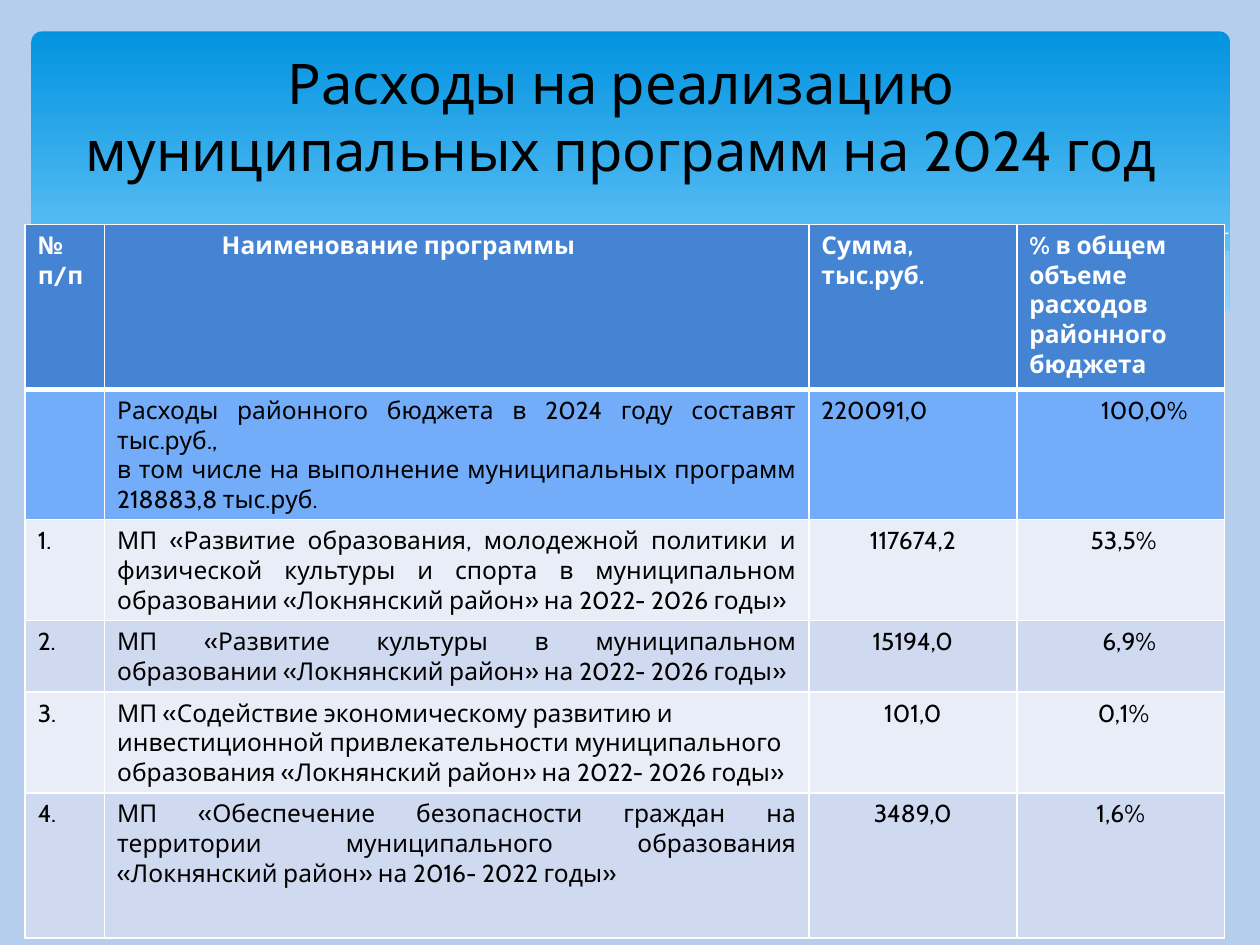
from lxml import etree
from pptx import Presentation, util as u
from pptx.dml.color import RGBColor
from pptx.enum import shapes, text
from pptx.oxml.ns import qn

FONT = "Cabin"
PALE, WHITE, BLACK = "B5CEED", "FFFFFF", "000000"
LEFT, CENTER, JUSTIFY = (text.PP_ALIGN.LEFT, text.PP_ALIGN.CENTER,
                         text.PP_ALIGN.JUSTIFY)
SPACE = 0.045  # indent step that nudges centred percentages

# Decorative waves: outline points in inches and their format
WAVES = [
    ([(9.75, 1.99), (9.35, 2.07), (8.61, 2.23), (7.79, 2.42), (7.06, 2.57),
      (6.61, 2.65), (7.05, 2.71), (7.57, 2.76), (8.03, 2.78), (8.54, 2.76),
      (8.97, 2.7), (9.35, 2.61), (9.76, 2.47), (9.76, 1.99)],
     {"fill": "C6E7FC", "alpha": 29}),
    ([(8.93, 2.73), (8.37, 2.65), (7.75, 2.54), (7.06, 2.4), (6.29, 2.22),
      (5.69, 2.08), (5.14, 1.98), (4.65, 1.91), (4.2, 1.87), (3.8, 1.86),
      (3.28, 1.87), (2.86, 1.91), (3.42, 1.99), (4.04, 2.11), (4.91, 2.32),
      (5.66, 2.48), (6.34, 2.61), (6.95, 2.7), (7.48, 2.76), (8.07, 2.78),
      (8.57, 2.77)],
     {"fill": "C6E7FC", "alpha": 40}),
    ([(3.09, 1.95), (3.44, 1.9), (4.01, 1.87), (4.5, 1.88), (5.1, 1.92),
      (5.82, 2), (6.36, 2.08), (6.95, 2.19), (7.6, 2.33), (8.31, 2.51),
      (9.07, 2.72)],
     {"line": WHITE}),
    ([(6.13, 2.57), (6.72, 2.41), (7.48, 2.23), (8.36, 2.04), (8.95, 1.94),
      (9.38, 1.88), (9.75, 1.85)],
     {"line": WHITE}),
    ([(9.77, 2.46), (9.4, 2.59), (8.99, 2.69), (8.5, 2.75), (8.09, 2.77),
      (7.44, 2.74), (6.68, 2.65), (5.79, 2.5), (5.03, 2.33), (4.18, 2.13),
      (3.39, 1.97), (2.71, 1.88), (1.93, 1.84), (1.32, 1.86), (0.85, 1.93),
      (0.46, 2.03), (0.23, 2.13), (0.23, 3.29), (9.77, 3.29)],
     {"fill": PALE}),
]

# Table content: each cell is (paragraphs, alignment, left indent in inches)
COLUMN_WIDTHS = [0.63, 5.59, 1.65, 1.65]
ROW_HEIGHTS = [1.31, 0.8, 0.8, 0.56, 0.8, 1.15]
ROW_FILLS = ["4584D3", "73ACF8", "E9EDF7", "CFD9EF", "E9EDF7", "CFD9EF"]
HEADER = [
    (["№ п/п"], LEFT, 0),
    (["Наименование программы"], LEFT, 0.83),
    (["Сумма, тыс.руб."], LEFT, 0),
    (["% в общем объеме расходов районного бюджета"], LEFT, 0),
]
TOTAL = [
    ([""], LEFT, 0),
    (["Расходы районного бюджета в 2024 году составят тыс.руб.,",
      "в том числе на выполнение муниципальных программ 218883,8 тыс.руб."],
     JUSTIFY, 0),
    (["220091,0"], LEFT, 0),
    (["100,0%"], LEFT, 0.57),
]
PROGRAMS = [
    ("МП «Развитие образования, молодежной политики и физической культуры "
     "и спорта в муниципальном образовании «Локнянский район» "
     "на 2022- 2026 годы»", JUSTIFY, "117674,2", "53,5%", SPACE),
    ("МП «Развитие культуры в муниципальном образовании «Локнянский район» "
     "на 2022- 2026 годы»", JUSTIFY, "15194,0", "6,9%", 3 * SPACE),
    ("МП «Содействие экономическому развитию и инвестиционной "
     "привлекательности муниципального образования «Локнянский район» "
     "на 2022- 2026 годы»", LEFT, "101,0", "0,1%", SPACE),
    ("МП «Обеспечение безопасности граждан на территории муниципального "
     "образования «Локнянский район» на 2016- 2022 годы»",
     JUSTIFY, "3489,0", "1,6%", 0),
]


def color(hex_value):
    return RGBColor.from_string(hex_value)


def paint(fill, hex_value):
    fill.solid()
    fill.fore_color.rgb = color(hex_value)


def style_run(run, hex_value, **formats):
    for name, value in {"name": FONT, **formats}.items():
        setattr(run.font, name, value)
    run.font.color.rgb = color(hex_value)


def add_banner(slide):
    banner = slide.shapes.add_shape(
        shapes.MSO_SHAPE.ROUNDED_RECTANGLE,
        u.Inches(0.25), u.Inches(0.25), u.Inches(9.51), u.Inches(2.7))
    banner.adjustments[0] = 0.03
    banner.shadow.inherit = False
    banner.line.fill.background()
    banner.fill.gradient()
    banner.fill.gradient_angle = 270
    stops = [(0, "0293E0"), (0.9, "83D3FE")]
    for stop, (position, hex_value) in zip(banner.fill.gradient_stops, stops):
        stop.position = position
        stop.color.rgb = color(hex_value)


def add_wave(slide, points, fill=None, alpha=None, line=None):
    start, *rest = [(u.Inches(x), u.Inches(y)) for x, y in points]
    builder = slide.shapes.build_freeform(*start)
    builder.add_line_segments(rest, close=fill is not None)
    wave = builder.convert_to_shape()
    wave.shadow.inherit = False
    if fill:
        paint(wave.fill, fill)
        wave.line.fill.background()
    else:
        wave.fill.background()
        wave.line.color.rgb = color(line)
        wave.line.width = u.Pt(0)
    if alpha:
        tint = wave.fill._xPr.find(qn("a:solidFill"))[0]
        etree.SubElement(tint, qn("a:alpha"), val=str(alpha * 1000))


def add_title(slide, wording):
    title = slide.shapes.add_textbox(
        u.Inches(0.43), u.Inches(0.36), u.Inches(9), u.Inches(1.12))
    frame = title.text_frame
    frame.word_wrap = True
    frame.vertical_anchor = text.MSO_ANCHOR.MIDDLE
    paragraph = frame.paragraphs[0]
    paragraph.alignment = CENTER
    run = paragraph.add_run()
    run.text = wording
    style_run(run, BLACK, size=u.Pt(32))


def set_borders(cell, widths):
    properties = cell._tc.get_or_add_tcPr()
    for index, (side, width) in enumerate(widths.items()):
        border = etree.Element(qn(f"a:ln{side}"), w=str(u.Pt(width)))
        solid = etree.SubElement(border, qn("a:solidFill"))
        etree.SubElement(solid, qn("a:srgbClr"), val=WHITE)
        properties.insert(index, border)


def fill_cell(cell, paragraphs, alignment, indent, is_header):
    frame = cell.text_frame
    for index, wording in enumerate(paragraphs):
        paragraph = frame.add_paragraph() if index else frame.paragraphs[0]
        paragraph.alignment = alignment
        if indent:
            paragraph._p.get_or_add_pPr().set("marL", str(u.Inches(indent)))
        if wording:
            run = paragraph.add_run()
            run.text = wording
            style_run(run, WHITE if is_header else BLACK,
                      size=u.Pt(14), bold=is_header)


def add_program_table(slide):
    rows = [HEADER, TOTAL]
    for number, (name, alignment, amount, share, nudge) in enumerate(PROGRAMS, 1):
        rows.append([([f"{number}."], LEFT, 0), ([name], alignment, 0),
                     ([amount], CENTER, 0), ([share], CENTER, nudge)])
    table = slide.shapes.add_table(
        len(rows), len(COLUMN_WIDTHS), u.Inches(0.2), u.Inches(1.78),
        u.Inches(sum(COLUMN_WIDTHS)), u.Inches(sum(ROW_HEIGHTS))).table
    for column, width in zip(table.columns, COLUMN_WIDTHS):
        column.width = u.Inches(width)
    for r, (row, height) in enumerate(zip(rows, ROW_HEIGHTS)):
        table.rows[r].height = u.Inches(height)
        for c, content in enumerate(row):
            cell = table.cell(r, c)
            fill_cell(cell, *content, is_header=r == 0)
            paint(cell.fill, ROW_FILLS[r])
            set_borders(cell, {"L": 1, "R": 1, "T": 3 if r == 1 else 1,
                               "B": 3 if r == 0 else 1})


def main():
    deck = Presentation()
    deck.slide_width, deck.slide_height = u.Inches(10), u.Inches(7.5)
    slide = deck.slides.add_slide(deck.slide_layouts[6])
    paint(slide.background.fill, PALE)

    # Backdrop
    add_banner(slide)
    for points, formats in WAVES:
        add_wave(slide, points, **formats)

    # Content
    add_title(slide, "Расходы на реализацию муниципальных программ на 2024 год")
    add_program_table(slide)
    deck.save("out.pptx")


if __name__ == "__main__":
    main()
